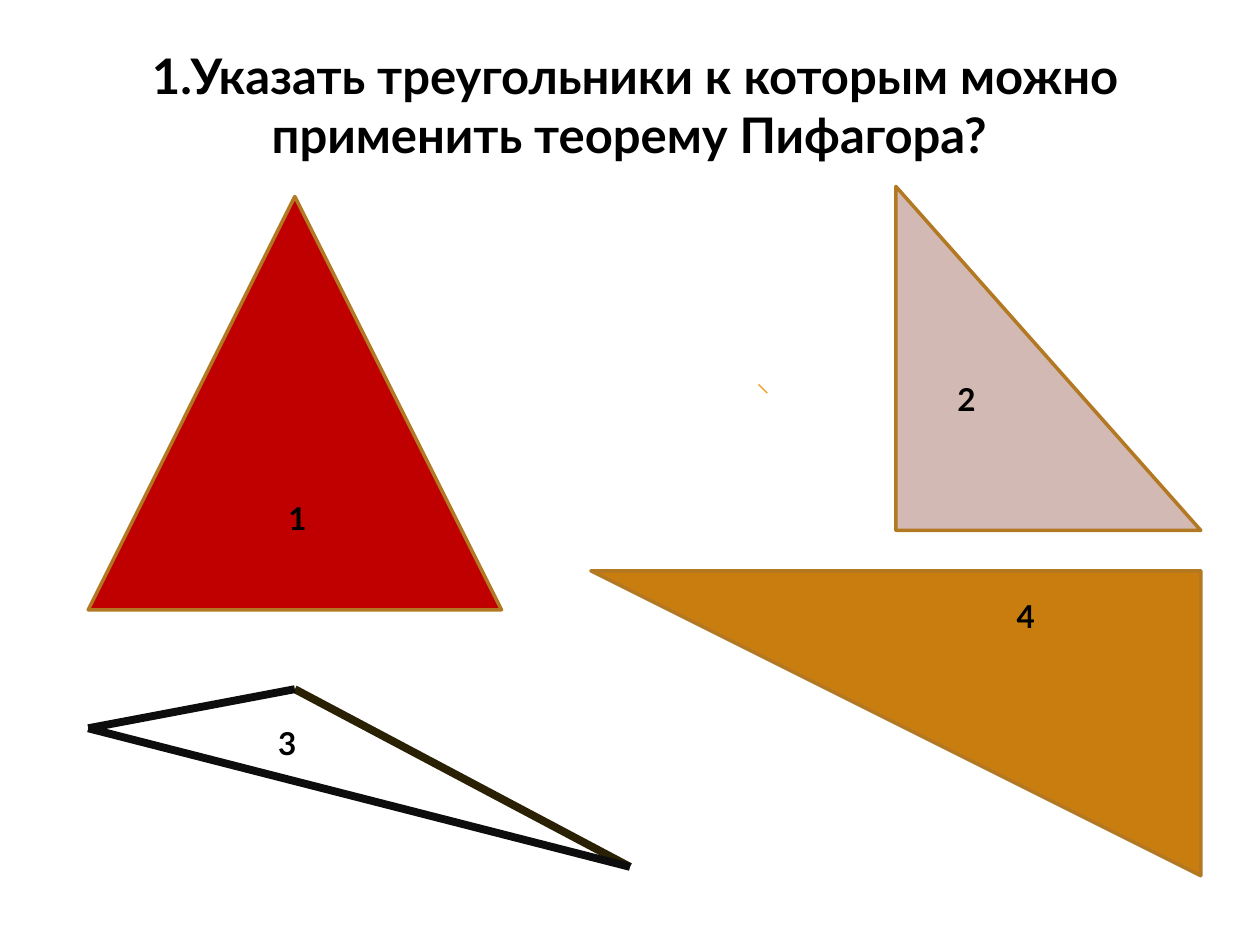
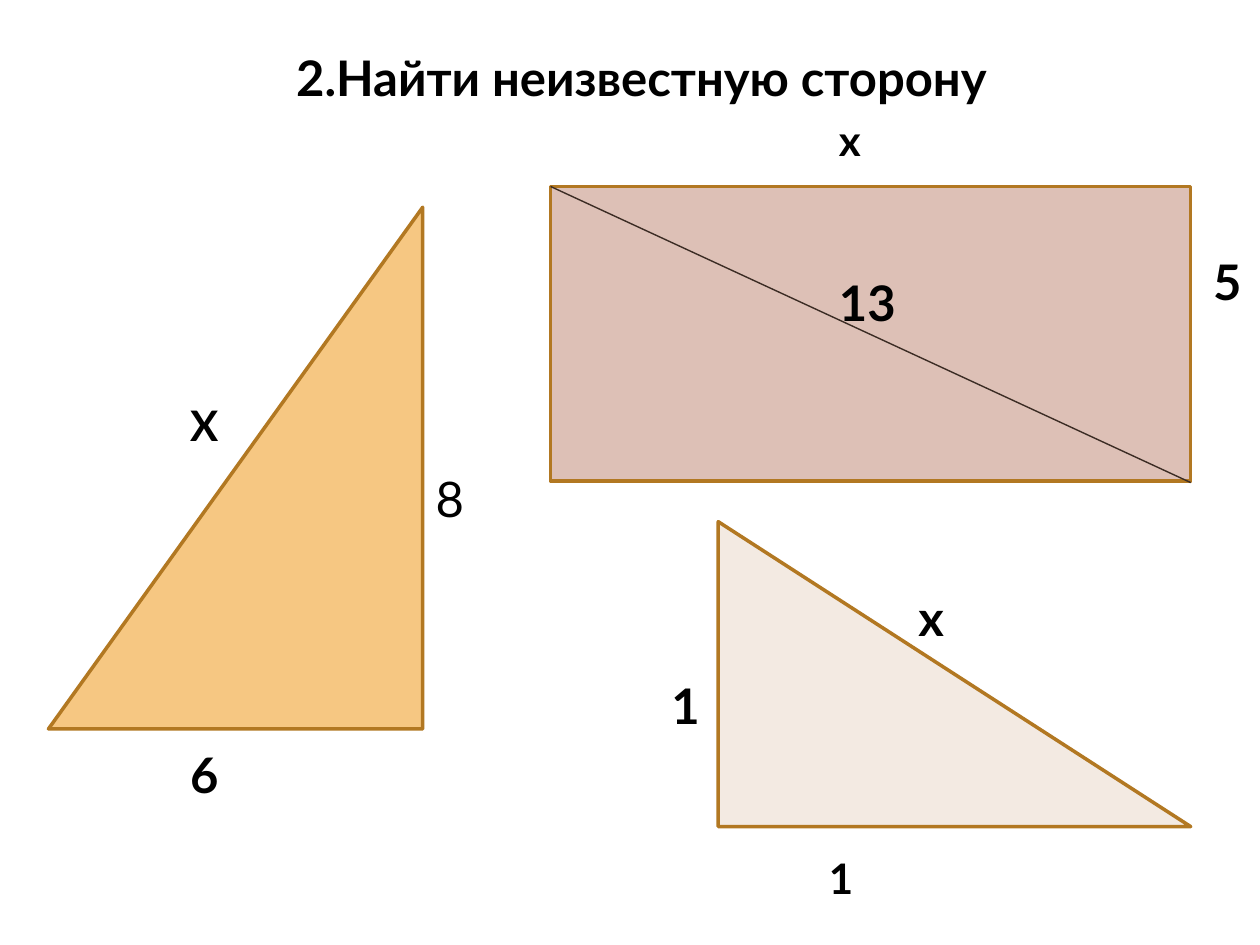
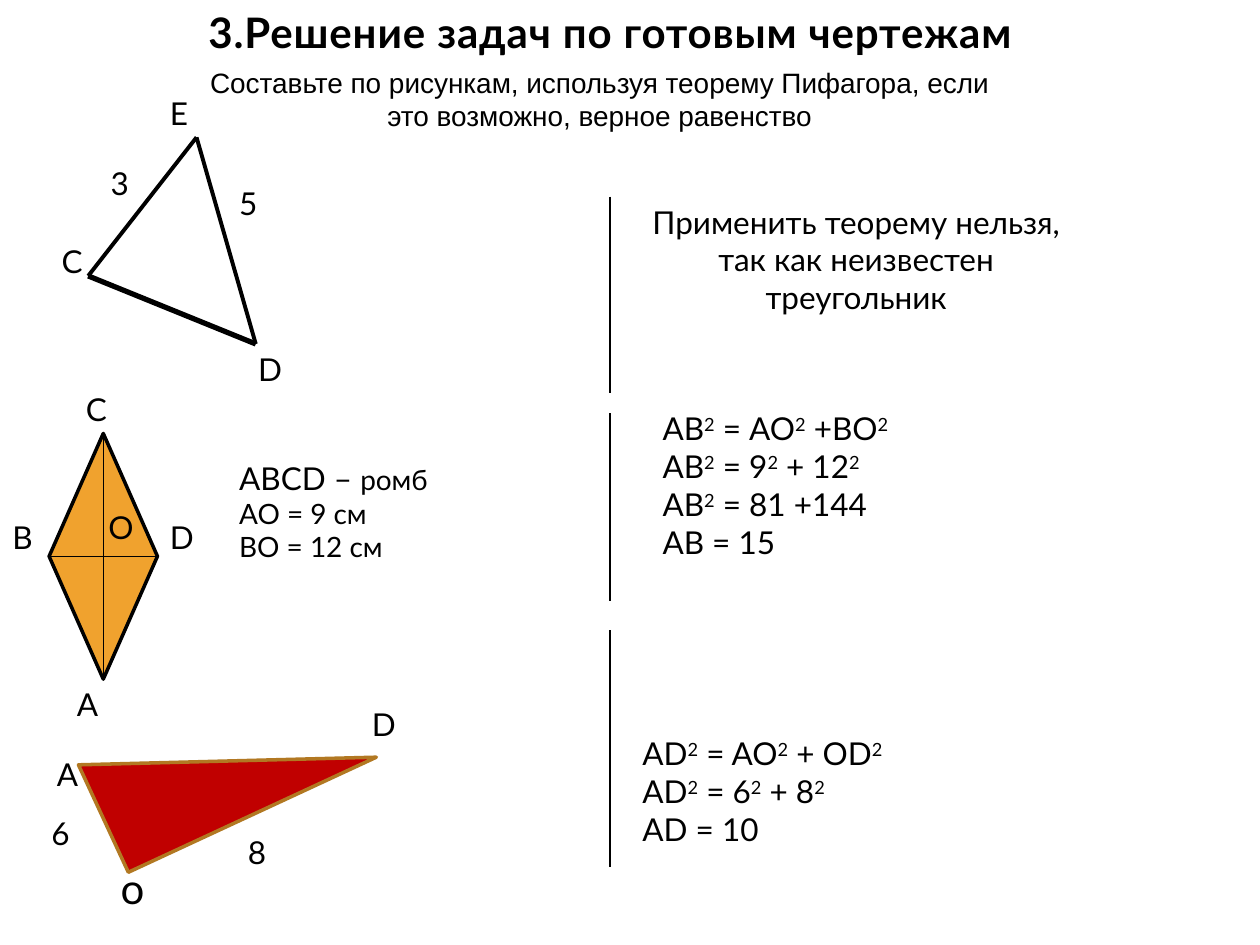
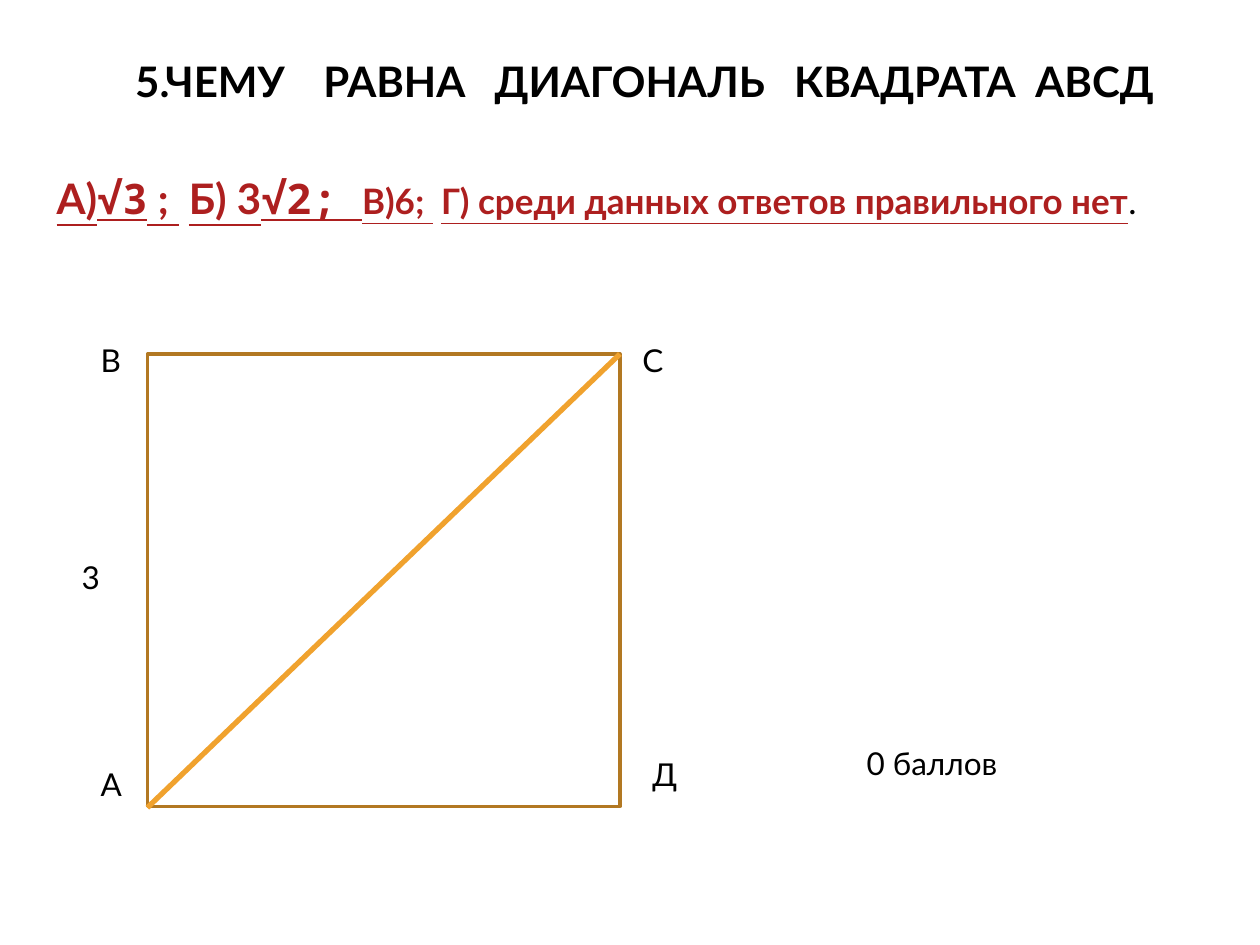
from dataclasses import dataclass, replace
from typing import Optional, Union

import pptx
import pptx.dml.color
import pptx.enum.shapes
import pptx.enum.text
import pptx.oxml.ns
import pptx.util
from pptx.util import Inches

# Shared look
FONT = "Lato"
MONO = "Noto Sans Mono"
BLACK = "000000"
WHITE = "FFFFFF"
NEAR_BLACK = "0D0D0D"
OUTLINE = "B27822"
ORANGE = "F0A22E"
RED = "C00000"
ANSWER_RED = "AD1F1F"
HAIRLINE = 0.79
SPACE_EM = 0.226  # width of a space as a share of the text size

SHAPE = pptx.enum.shapes.MSO_SHAPE
CENTER = pptx.enum.text.PP_ALIGN.CENTER
LEFT = pptx.enum.text.PP_ALIGN.LEFT


@dataclass(frozen=True)
class Run:
    text: str
    size: float = 18
    bold: bool = False
    font: str = FONT
    color: str = BLACK
    underline: bool = False
    superscript: bool = False
    spacing: float = 0


@dataclass(frozen=True)
class Text:
    """A text box; its height follows from the size and number of lines."""
    x: float
    y: float
    w: float
    paragraphs: Union[str, list]
    size: float = 18
    bold: bool = False
    font: str = FONT
    align: int = LEFT
    lines: int = 1
    spacing: float = 0


@dataclass(frozen=True)
class Figure:
    kind: int
    x: float
    y: float
    w: float
    h: float
    fill: str
    line: str = OUTLINE
    rotation: float = 0


@dataclass(frozen=True)
class Segment:
    x1: float
    y1: float
    x2: float
    y2: float
    color: str = BLACK
    width: float = HAIRLINE


def rgb(color: str) -> pptx.dml.color.RGBColor:
    return pptx.dml.color.RGBColor.from_string(color)


def title(x: float, y: float, w: float, text, size: float = 28, **style) -> Text:
    return Text(x, y, w, text, size=size, bold=True, align=CENTER, **style)


def gap(spaces: int, style: Run) -> Run:
    """One space widened to the width of several."""
    return replace(style, text=" ", spacing=(spaces - 1) * style.size * SPACE_EM)


def squares(text: str) -> list[Run]:
    """Split an equation at each ^2 and raise the 2."""
    runs = []
    for i, part in enumerate(text.split("^2")):
        if i:
            runs.append(Run("2", superscript=True))
        if part:
            runs.append(Run(part))
    return runs


def add_run(p, run: Run) -> None:
    r = p.add_run()
    r.text = run.text
    r.font.name = run.font
    r.font.size = pptx.util.Pt(run.size)
    r.font.bold = run.bold
    r.font.underline = run.underline
    r.font.color.rgb = rgb(run.color)
    r_pr = r.font._element
    if run.superscript:
        r_pr.set("baseline", "30000")
    if run.spacing:
        r_pr.set("spc", str(round(run.spacing * 100)))


def add_text(s, text: Text) -> None:
    height = text.lines * text.size * 1.2 / 72 + 0.1
    sp = s.shapes.add_textbox(Inches(text.x), Inches(text.y),
                              Inches(text.w), Inches(height))
    tf = sp.text_frame
    tf.word_wrap = True
    tf.auto_size = pptx.enum.text.MSO_AUTO_SIZE.SHAPE_TO_FIT_TEXT
    paragraphs = text.paragraphs
    if isinstance(paragraphs, str):
        paragraphs = [[Run(paragraphs, text.size, text.bold, text.font,
                           spacing=text.spacing)]]
    for i, runs in enumerate(paragraphs):
        p = tf.add_paragraph() if i else tf.paragraphs[0]
        p.alignment = text.align
        for run in runs:
            add_run(p, run)


def add_figure(s, figure: Figure):
    sp = s.shapes.add_shape(figure.kind, Inches(figure.x), Inches(figure.y),
                            Inches(figure.w), Inches(figure.h))
    sp.shadow.inherit = False
    sp.rotation = figure.rotation
    sp.fill.solid()
    sp.fill.fore_color.rgb = rgb(figure.fill)
    sp.line.color.rgb = rgb(figure.line)
    sp.line.width = pptx.util.Pt(2)
    return sp


def add_segment(s, segment: Segment, joined: Optional[tuple] = None) -> None:
    """Draw a line; joined is (shape, first site, last site)."""
    line = s.shapes.add_connector(
        pptx.enum.shapes.MSO_CONNECTOR.STRAIGHT,
        Inches(segment.x1), Inches(segment.y1),
        Inches(segment.x2), Inches(segment.y2))
    line.line.color.rgb = rgb(segment.color)
    line.line.width = pptx.util.Pt(segment.width)
    sp_pr = line._element.spPr
    sp_pr.append(sp_pr.makeelement(pptx.oxml.ns.qn("a:effectLst"), {}))
    if joined:
        sp, first, last = joined
        line.begin_connect(sp, first)
        line.end_connect(sp, last)


def draw(s, *items) -> None:
    adders = {Text: add_text, Figure: add_figure, Segment: add_segment}
    for item in items:
        adders[type(item)](s, item)


def which_triangles(s) -> None:
    draw(
        s,
        Figure(SHAPE.ISOSCELES_TRIANGLE, 0.7, 1.56, 3.28, 3.28, RED),
        Figure(SHAPE.RIGHT_TRIANGLE, 7.11, 1.48, 2.42, 2.73, "D3B9B3"),
        Figure(SHAPE.RIGHT_TRIANGLE, 4.69, 4.53, 4.84, 2.42, "C87D0E",
               rotation=180),
        # Triangle 3, side by side
        Segment(2.34, 5.47, 5, 6.88, "2A2003", 4.5),
        Segment(2.34, 5.47, 0.7, 5.78, NEAR_BLACK, 4.5),
        Segment(0.7, 5.78, 5, 6.88, NEAR_BLACK, 4.5),
        # Numbers
        Text(2.19, 3.91, 0.47, "1", bold=True),
        Text(7.5, 2.97, 0.7, "2", bold=True),
        Text(2.11, 5.7, 0.47, "3", bold=True),
        Text(7.97, 4.69, 0.39, "4", bold=True),
        title(0.39, 0.31, 9.3, "1.Указать треугольники к которым можно "
              "применить теорему Пифагора? ", lines=2),
        Segment(6.02, 3.05, 6.09, 3.12, ORANGE),
    )


def unknown_side(s) -> None:
    draw(
        s,
        Figure(SHAPE.RIGHT_TRIANGLE, -0.2, 2.23, 4.14, 2.97, "F6C782",
               rotation=270),
        Figure(SHAPE.RIGHT_TRIANGLE, 5.7, 4.14, 3.75, 2.42, "F3EAE2"),
        Figure(SHAPE.RECTANGLE, 4.37, 1.48, 5.08, 2.34, "DDC0B6"),
        Segment(4.37, 1.48, 9.45, 3.83, "3B2C24"),
        # Left triangle
        Text(1.41, 5.86, 0.78, "6", 28, True),
        Text(1.41, 3.12, 0.39, "X", 24, True),
        Text(3.36, 3.67, 0.39, "8", 28),
        # Rectangle
        Text(6.56, 0.86, 0.7, "x", 24, True),
        Text(9.53, 1.95, 0.47, "5", 28, True),
        Text(6.56, 2.11, 0.7, "13", 28, True),
        # Lower triangle
        Text(5.23, 5.31, 0.47, "1", 28, True),
        Text(6.48, 6.72, 0.94, "1", 24, True),
        Text(7.19, 4.61, 0.55, "x", 28, True),
        title(2.08, 0.33, 6.02, "2.Найти неизвестную сторону"),
    )


def ready_drawings(s) -> None:
    draw(
        s,
        title(1.25, 0, 7.19, "3.Решение задач по готовым чертежам", 24,
              spacing=0.5),
        Text(1.48, 0.47, 6.56, "Составьте по рисункам, используя теорему "
             "Пифагора, если это возможно, верное равенство", 16,
             font="Arial", align=CENTER, lines=2),
    )
    # Dividers between drawings and solutions
    for top, bottom in ((1.56, 3.12), (3.28, 4.77), (5, 6.88)):
        add_segment(s, Segment(4.84, top, 4.84, bottom))

    # Triangle CED
    draw(
        s,
        Segment(1.56, 1.09, 0.7, 2.19, width=2.25),
        Segment(1.56, 1.09, 2.03, 2.73, width=2.25),
        Segment(0.7, 2.19, 2.03, 2.73, width=3),
        Text(1.8, 1.41, 0.39, "5"),
        Text(0.78, 1.25, 0.47, "3"),
        Text(0.39, 1.87, 0.23, "C"),
        Text(1.95, 2.73, 0.23, "D"),
        Text(1.25, 0.7, 0.31, "E"),
        Text(5, 1.56, 3.59, "Применить теорему нельзя, так как неизвестен "
             "треугольник", align=CENTER, lines=3),
    )

    # Rhombus ABCD with its diagonals
    rhombus = add_figure(s, Figure(SHAPE.DIAMOND, 0.39, 3.44, 0.86, 1.95,
                                   ORANGE, BLACK))
    add_segment(s, Segment(0.82, 3.44, 0.82, 5.39), (rhombus, 0, 2))
    add_segment(s, Segment(0.39, 4.41, 1.25, 4.41), (rhombus, 1, 3))
    draw(
        s,
        Text(0.55, 5.39, 0.16, "A"),
        Text(1.25, 4.06, 0.47, "D"),
        Text(0, 4.06, 0.23, "B"),
        Text(0.62, 3.05, 0.16, "C"),
        Text(0.86, 3.98, 0.08, "O"),
        Text(1.8, 3.59, 1.88, [
            [Run("ABCD – "), Run("ромб", 16)],
            [Run("АО = 9 см", 16)],
            [Run("ВО = 12 см", 16)],
        ], size=16.8, lines=3),
        Text(5.16, 3.2, 2.58, [squares(line) for line in (
            "АВ^2 = AO^2 +BO^2", "AB^2 = 9^2 + 12^2",
            "AB^2 = 81 +144", "AB = 15")], lines=4),
    )

    # Right triangle AOD
    draw(
        s,
        Figure(SHAPE.RIGHT_TRIANGLE, 0.72, 5.57, 2.17, 0.94, RED,
               rotation=335.1),
        Text(0.31, 6.41, 0.47, "6"),
        Text(1.87, 6.56, 0.23, "8"),
        Text(0.39, 5.94, 0.16, "А"),
        Text(2.89, 5.55, 0.16, "D"),
        Text(0.86, 6.8, 0.39, "o", 24),
        Text(5, 5.78, 2.89, [squares(line) for line in (
            "AD^2 = AO^2 + OD^2", "AD^2 = 6^2 + 8^2", "AD = 10")], lines=3),
    )


def square_diagonal(s) -> None:
    heading = Run("5.ЧЕМУ", 24, bold=True)
    heading_runs = [heading]
    for spaces, word in ((4, "РАВНА"), (3, "ДИАГОНАЛЬ"),
                         (3, "КВАДРАТА"), (2, "АВСД")):
        heading_runs += [gap(spaces, heading), replace(heading, text=word)]

    answer = Run("А)", 24, True, color=ANSWER_RED, underline=True)
    small = replace(answer, text="В)6;", size=20)
    answers = [
        answer,
        replace(answer, text="√3", font=MONO),
        replace(answer, text=" ;"),
        gap(2, answer),
        replace(answer, text="Б) 3"),
        replace(answer, text="√2; ", font=MONO),
        small,
        gap(2, small),
        replace(small, text="Г) среди данных ответов правильного нет"),
        Run(".", 20),
    ]
    draw(
        s,
        title(0.78, 0.39, 8.67, [heading_runs], 24),
        Text(0.35, 1.32, 9.45, [answers], 24),
        Figure(SHAPE.RECTANGLE, 1.17, 2.81, 3.75, 3.59, WHITE),
        Segment(1.17, 6.41, 4.92, 2.81, ORANGE, 3),
        Text(0.55, 4.38, 0.47, "3"),
        Text(0.7, 6.02, 0.39, "А"),
        Text(0.7, 2.66, 0.39, "В"),
        Text(5, 2.66, 0.55, "С"),
        Text(5.08, 5.94, 0.39, "Д"),
        Text(6.78, 5.86, 1.66, "0 баллов"),
    )


def main() -> None:
    prs = pptx.Presentation()
    prs.slide_width = Inches(10)
    prs.slide_height = Inches(7.5)
    for build in (which_triangles, unknown_side, ready_drawings,
                  square_diagonal):
        build(prs.slides.add_slide(prs.slide_layouts[6]))
    prs.save("out.pptx")


if __name__ == "__main__":
    main()
